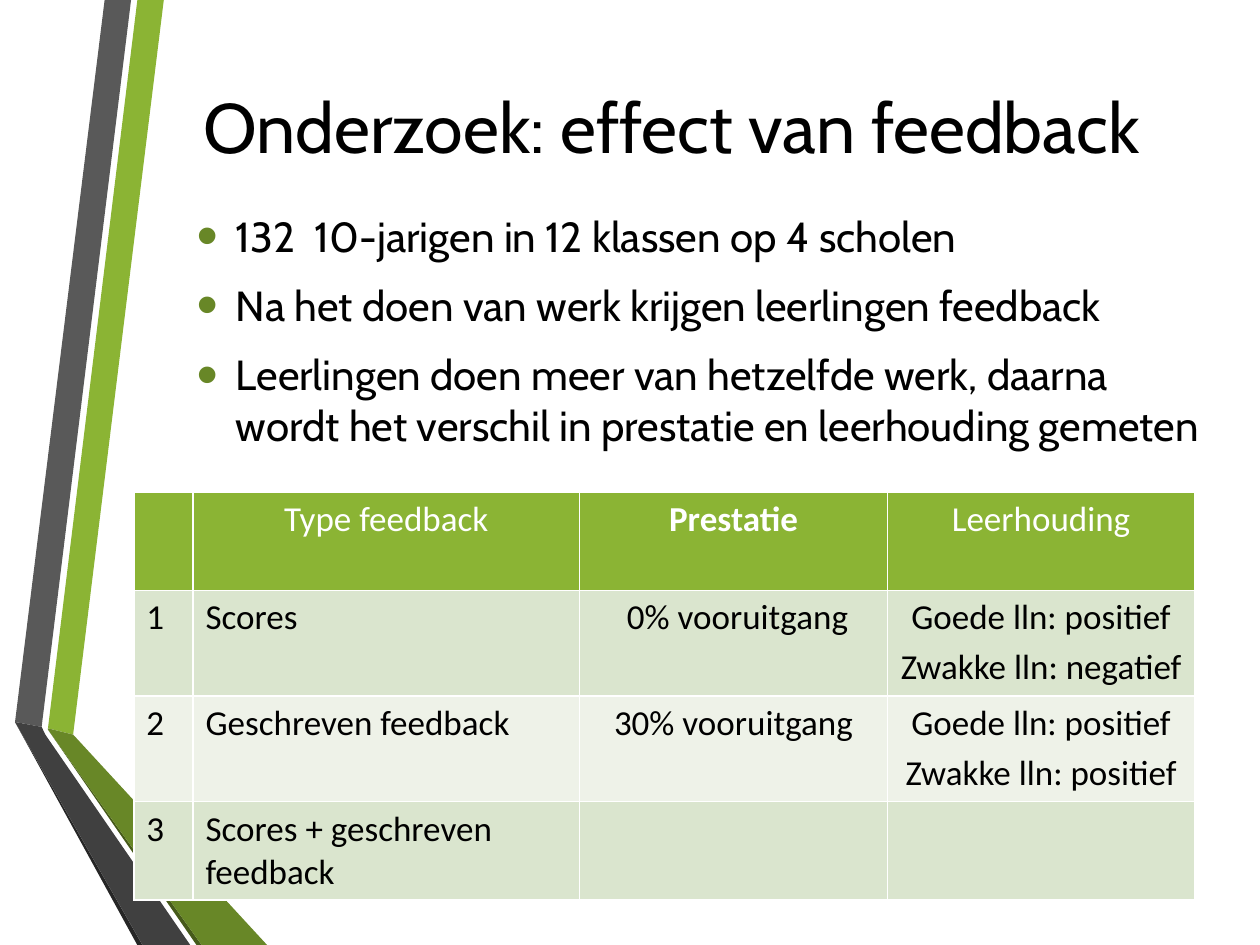
from lxml import etree
from pptx import Presentation
from pptx.dml.color import RGBColor
from pptx.enum.text import MSO_ANCHOR, MSO_AUTO_SIZE, PP_ALIGN
from pptx.oxml.ns import qn
from pptx.util import Pt

LEFT, CENTER = PP_ALIGN.LEFT, PP_ALIGN.CENTER
TOP, MIDDLE = MSO_ANCHOR.TOP, MSO_ANCHOR.MIDDLE
NO_FIT = MSO_AUTO_SIZE.NONE

BLACK, WHITE = "000000", "FFFFFF"
GREEN, DARK_GREEN, DEEP_GREEN = "8BB434", "688727", "465A1A"
BAND_FILLS = ["DAE5CE", "EEF2E8"]

RIBBONS = [
    (GREEN, [(27.4, 416.2), (41.8, 419.8), (93.6, 0), (78.5, 0)]),
    ("595959", [(74.9, 0), (59.8, 0), (8.6, 412.6), (23.8, 415.4)]),
    ("262626", [(8.6, 412.6), (78.5, 540), (81.4, 540)]),
    (DEEP_GREEN, [(27.4, 416.9), (112.3, 540), (115.2, 540)]),
    (DARK_GREEN, [(27.4, 416.9), (115.2, 540), (152.6, 540), (41.8, 419.8), (27.4, 416.2)]),
    ("404040", [(108.7, 540), (25.9, 419.8), (23.8, 415.4), (8.6, 412.6), (81.4, 540)]),
]

BULLETS = [
    "132  10-jarigen in 12 klassen op 4 scholen",
    "Na het doen van werk krijgen leerlingen feedback",
    "Leerlingen doen meer van hetzelfde werk, daarna wordt het verschil "
    "in prestatie en leerhouding gemeten",
]

COLUMN_WIDTHS = [33.8, 221, 175.8, 175.8]
ROW_HEIGHTS = [56, 60.4, 60.4, 56]
RESULTS = [
    ["", "Type feedback", "Prestatie", "Leerhouding"],
    ["1", "Scores", " 0% vooruitgang", "Goede lln: positief\nZwakke lln: negatief"],
    ["2", "Geschreven feedback", "30% vooruitgang", "Goede lln: positief\nZwakke lln: positief"],
    ["3", "Scores + geschreven feedback", "", ""],
]


def color(value):
    return RGBColor.from_string(value)


def add_xml(parent, tag, **attributes):
    return etree.SubElement(parent, qn(tag), attributes)


def apply(target, values):
    for name, value in values.items():
        setattr(target, name, value)


class SlideBuilder:
    title_font = {"name": "Cabin", "size": Pt(40), "bold": False}
    body_font = {"name": "Cabin", "size": Pt(24), "bold": False}
    table_font = {"name": "Calibri", "size": Pt(20)}

    def __init__(self, page):
        self.page = page

    def fill_para(self, para, text, font, ink, **layout):
        apply(para, layout)
        span = para.add_run()
        span.text = text
        apply(span.font, font)
        span.font.color.rgb = color(ink)

    def place(self, box, left, top, width, height, anchor):
        apply(box, {"left": Pt(left), "top": Pt(top), "width": Pt(width), "height": Pt(height)})
        apply(box.text_frame, {"word_wrap": True, "auto_size": NO_FIT, "vertical_anchor": anchor})

    def ribbon(self, fill, points):
        corners = [(Pt(x), Pt(y)) for x, y in points]
        builder = self.page.shapes.build_freeform(*corners[0])
        builder.add_line_segments(corners[1:], close=True)
        shape = builder.convert_to_shape()
        shape.fill.solid()
        shape.fill.fore_color.rgb = color(fill)
        shape.line.fill.background()
        shape.shadow.inherit = False
        self.page.shapes.title.element.addprevious(shape.element)

    def title(self, text, *area):
        box = self.page.shapes.title
        self.place(box, *area, MIDDLE)
        self.fill_para(box.text_frame.paragraphs[0], text, self.title_font, BLACK, alignment=CENTER)

    def bullets(self, lines, *area):
        box = self.page.placeholders[1]
        self.place(box, *area, TOP)
        frame = box.text_frame
        for index, line in enumerate(lines):
            para = frame.add_paragraph() if index else frame.paragraphs[0]
            self.fill_para(para, line, self.body_font, BLACK, alignment=LEFT,
                           space_before=Pt(4.8), space_after=Pt(6))
            properties = para._p.get_or_add_pPr()
            properties.set("marL", str(Pt(22.5)))
            properties.set("indent", str(-Pt(22.5)))
            add_xml(add_xml(properties, "a:buClr"), "a:srgbClr", val=DARK_GREEN)
            add_xml(properties, "a:buSzPct", val="145000")
            add_xml(properties, "a:buFont", typeface="Arial")
            add_xml(properties, "a:buChar", char="•")

    def cell(self, cell, text, fill, ink, bold, alignment):
        properties = cell._tc.get_or_add_tcPr()
        for side in "LRTB":
            line = add_xml(properties, f"a:ln{side}", w=str(Pt(1)))
            add_xml(add_xml(line, "a:solidFill"), "a:srgbClr", val=WHITE)
        cell.fill.solid()
        cell.fill.fore_color.rgb = color(fill)
        if not text:
            return
        font = {**self.table_font, "bold": bold}
        frame = cell.text_frame
        for index, line in enumerate(text.split("\n")):
            para = frame.add_paragraph() if index else frame.paragraphs[0]
            self.fill_para(para, line, font, ink, alignment=alignment, space_before=Pt(4))

    def table(self, rows, widths, heights, left, top):
        frame = self.page.shapes.add_table(
            len(rows), len(widths), Pt(left), Pt(top), Pt(sum(widths)), Pt(sum(heights)))
        table = frame.table
        for column, width in zip(table.columns, widths):
            column.width = Pt(width)
        for row, height in zip(table.rows, heights):
            row.height = Pt(height)
        for r, texts in enumerate(rows):
            header = r == 0
            fill = GREEN if header else BAND_FILLS[(r - 1) % 2]
            for c, text in enumerate(texts):
                self.cell(table.cell(r, c), text, fill, WHITE if header else BLACK,
                          header and c == 2, CENTER if header or c >= 2 else LEFT)


def main():
    deck = Presentation()
    apply(deck, {"slide_width": Pt(720), "slide_height": Pt(540)})
    builder = SlideBuilder(deck.slides.add_slide(deck.slide_layouts[1]))
    for fill, points in RIBBONS:
        builder.ribbon(fill, points)
    builder.title("Onderzoek: effect van feedback", 87.8, 20.9, 591.8, 102.2)
    builder.bullets(BULLETS, 105.1, 116.6, 591.8, 291.6)
    builder.table(RESULTS, COLUMN_WIDTHS, ROW_HEIGHTS, 76.5, 281.3)
    deck.save("out.pptx")


if __name__ == "__main__":
    main()
